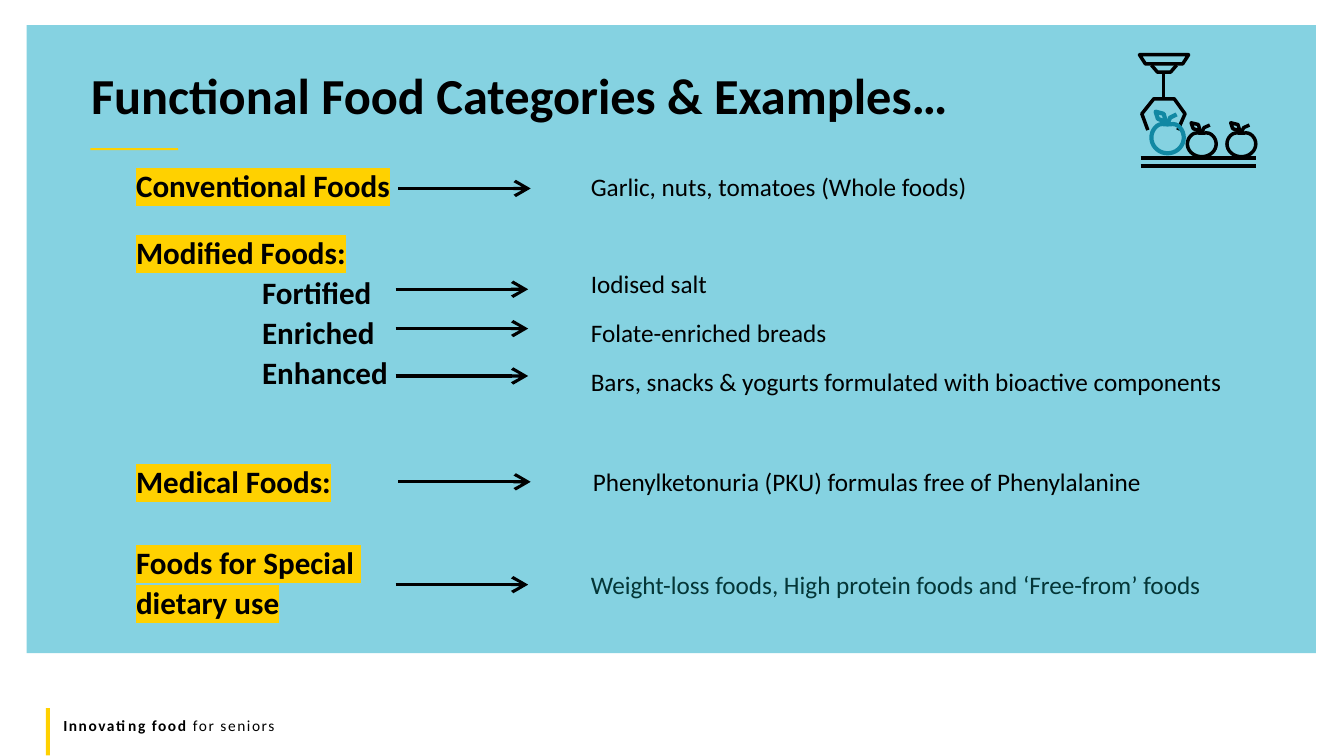
from math import cos, pi, sin

from lxml import etree
from pptx import Presentation, util as u
from pptx.dml.color import RGBColor
from pptx.enum import shapes, text
from pptx.oxml.ns import qn

COLUMNS, ROWS = 133.33, 75
UNIT = u.Inches(0.1)
BLACK, YELLOW, BLUE, TEAL, DARK = "000000", "FFD100", "85D2E1", "1188A3", "043637"

CATEGORIES = [
    ("Conventional Foods", 0, 0),
    ("Modified Foods:", 0, 29.7),
    ("Fortified", 12.5, 9.9),
    ("Enriched", 12.5, 9.9),
    ("Enhanced", 12.5, 9.9),
    ("Medical Foods:", 0, 59),
    ("Foods for Special ", 0, 38.9),
    ("dietary use", 0, 9.9),
]
EXAMPLES = [
    ((57.63, 16.5, 51.3, 4), ["Garlic, nuts, tomatoes (Whole foods)"], BLACK),
    ((57.63, 26.15, 68.3, 13.8), ["Iodised salt", "Folate-enriched breads",
     "Bars, snacks & yogurts formulated with bioactive components"], BLACK),
    ((57.83, 45.8, 59.7, 4), ["Phenylketonuria (PKU) formulas free of Phenylalanine"], BLACK),
    ((57.63, 56, 68.3, 4), ["Weight-loss foods, High protein foods and ‘Free-from’ foods"], DARK),
]
ARROWS = [(39.5, 18.7), (39.25, 28.7), (39.25, 32.6), (39.25, 37.3), (39.5, 47.8), (39.25, 58)]

MACHINE = [
    [(0.02, 0.02), (0.43, 0.02), (0.38, 0.1), (0.07, 0.1), (0.02, 0.02)],
    [(0.12, 0.11), (0.17, 0.17), (0.28, 0.17), (0.33, 0.11)],
    [(0.22, 0.18), (0.22, 0.39)],
    [(0.09, 0.67), (0.04, 0.53), (0.14, 0.4), (0.31, 0.4), (0.4, 0.53), (0.34, 0.67)],
]


def rgb(value):
    return RGBColor.from_string(value)


def cells(*counts):
    return [round(n * UNIT) for n in counts]


def style(font, size, color=BLACK, bold=False):
    font.name, font.size, font.bold = "Calibri", u.Pt(size), bold
    font.color.rgb = rgb(color)


def highlight(r, color):
    mark = etree.Element(qn("a:highlight"))
    etree.SubElement(mark, qn("a:srgbClr"), val=color)
    r.font.fill._xPr.find(qn("a:solidFill")).addnext(mark)


def block(s, box, color):
    sp = s.shapes.add_shape(shapes.MSO_SHAPE.RECTANGLE, *cells(*box))
    sp.shadow.inherit = False
    sp.fill.solid()
    sp.fill.fore_color.rgb = rgb(color)
    sp.line.fill.background()
    return sp


def place(sp, box):
    sp.left, sp.top, sp.width, sp.height = cells(*box)
    tf = sp.text_frame
    tf.word_wrap = True
    tf.auto_size = text.MSO_AUTO_SIZE.NONE
    tf.vertical_anchor = text.MSO_ANCHOR.TOP
    return tf


def heading(s, box):
    x, y, w, h = box
    tf = place(s.shapes.title, box)
    tf.text = "Functional Food Categories & Examples…"
    p = tf.paragraphs[0]
    p.alignment = text.PP_ALIGN.LEFT
    p.line_spacing = 0.8
    style(p.runs[0].font, 36, bold=True)
    block(s, (x + 0.95, y + 7.7, 8.7, 0.2), YELLOW)


def category_list(s, box):
    tf = place(s.placeholders[1], box)
    tf.text = "\n".join(name for name, _, _ in CATEGORIES)
    for p, (name, indent, gap) in zip(tf.paragraphs, CATEGORIES):
        pPr = p._p.get_or_add_pPr()
        pPr.set("marL", str(cells(indent)[0]))
        pPr.set("indent", "0")
        etree.SubElement(pPr, qn("a:buNone"))
        p.line_spacing = 0.7
        p.space_before = u.Pt(gap)
        style(p.runs[0].font, 22.2, bold=True)
        if not indent:
            highlight(p.runs[0], YELLOW)


def example_text(s, box, lines, color):
    tf = place(s.shapes.add_textbox(0, 0, 0, 0), box)
    tf.text = "\n".join(lines)
    for i, p in enumerate(tf.paragraphs):
        p.space_before = u.Pt(13.2 if i else 0)
        style(p.runs[0].font, 18, color)


def arrow(s, x, y, length=13.15):
    start, end, level = cells(x, x + length, y)
    line = s.shapes.add_connector(shapes.MSO_CONNECTOR.STRAIGHT, start, level, end, level)
    line.line.color.rgb = rgb(BLACK)
    line.line.width = u.Pt(2.25)
    etree.SubElement(line.line._get_or_add_ln(), qn("a:tailEnd"), type="arrow", w="lg", len="lg")
    etree.SubElement(line._element.spPr, qn("a:effectLst"))


def stroke(s, box, contours, color=BLACK, weight=2.5):
    x, y, w, h = box
    path = None
    for contour in contours:
        spots = [cells(x + w * a, y + h * b) for a, b in contour]
        if path is None:
            path = s.shapes.build_freeform(*spots[0])
        else:
            path.move_to(*spots[0])
        path.add_line_segments(spots[1:], close=contour[0] == contour[-1])
    sp = path.convert_to_shape()
    sp.shadow.inherit = False
    sp.fill.background()
    sp.line.color.rgb = rgb(color)
    sp.line.width = u.Pt(weight)


def apple(left, top, width, height):
    angles = [2 * pi * i / 36 for i in range(36)]
    body = [(0.5 + 0.5 * cos(t), 0.5 + 0.5 * sin(t) + 0.08 * max(0, -sin(t)) ** 12)
            for t in angles]
    leaf = [(0.45, 0), (0.2, -0.1), (0.13, -0.33), (0.38, -0.26), (0.45, 0)]
    stem = [(0.5, 0.05), (0.58, -0.14), (0.78, -0.24)]
    return [[(left + width * a, top + height * b) for a, b in part]
            for part in (body + body[:1], leaf, stem)]


def sorting_icon(s, box):
    belt, rail = ([(0.03, level), (0.99, level)] for level in (0.91, 0.98))
    stroke(s, box, MACHINE)
    stroke(s, box, apple(0.42, 0.68, 0.24, 0.22) + apple(0.75, 0.68, 0.24, 0.22) + [belt])
    stroke(s, box, [rail])
    stroke(s, box, apple(0.12, 0.6, 0.27, 0.27), TEAL, 3)


def footer(s, box):
    x, y, w, h = box
    block(s, (x - 0.75, y - 0.35, 0.4, 4.7), YELLOW)
    tf = place(s.shapes.add_textbox(0, 0, 0, 0), box)
    for words, bold in (("Innovating food ", True), ("for seniors", False)):
        r = tf.paragraphs[0].add_run()
        r.text = words
        style(r.font, 11, bold=bold)
        r._r.get_or_add_rPr().set("spc", "110")


def categories_slide(prs):
    s = prs.slides.add_slide(prs.slide_layouts[1])
    panel = block(s, (2.65, 2.5, 127.9, 62.3), BLUE)
    s.shapes.title.element.addprevious(panel.element)
    heading(s, (8.03, 7, 118.2, 6.4))
    category_list(s, (12.5, 17, 113.7, 47.8))
    for x, y in ARROWS:
        arrow(s, x, y)
    for box, lines, color in EXAMPLES:
        example_text(s, box, lines, color)
    sorting_icon(s, (112.8, 5.2, 11.9, 11.5))
    footer(s, (5.3, 70.6, 120, 2.9))


def main():
    prs = Presentation()
    prs.slide_width, prs.slide_height = cells(COLUMNS, ROWS)
    categories_slide(prs)
    prs.save("out.pptx")


if __name__ == "__main__":
    main()
